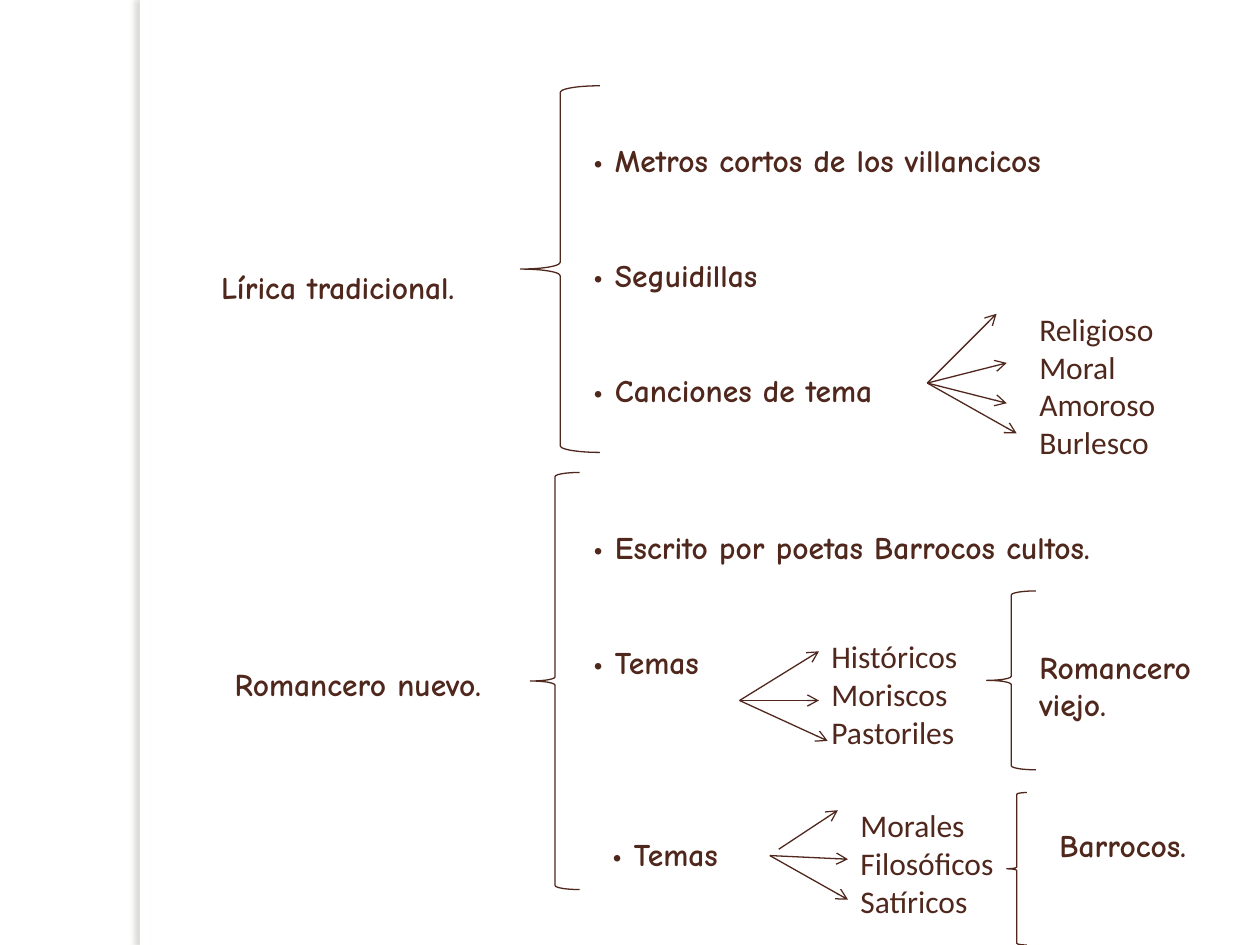
from dataclasses import dataclass

from lxml.etree import SubElement
from pptx import Presentation
from pptx.dml.color import RGBColor
from pptx.enum.shapes import MSO_CONNECTOR as Connector, MSO_SHAPE as Preset
from pptx.enum.text import MSO_ANCHOR as Anchor, MSO_AUTO_SIZE as AutoSize, PP_ALIGN as Align
from pptx.oxml.ns import qn
from pptx.util import Pt

BROWN, WHITE, SHADOW = "4F271C", "FFFFFF", "736F63"
HAND, PLAIN = "Comic Neue", "Calibri"
BLANK_LINES = 44  # gap between separated points


@dataclass
class Box:
    left: float
    top: float
    width: float
    height: float

    def lengths(self) -> list:
        return [Pt(v) for v in (self.left, self.top, self.width, self.height)]


@dataclass
class Note:
    box: Box
    lines: list[str]
    font: str = HAND
    gap: float = 0
    wrap: bool = True


@dataclass
class Fan:
    start: tuple[float, float]
    ends: list[tuple[float, float]]


LABELS = [
    ("Lírica tradicional.", Box(99.4, 128.2, 187.2, 72)),
    ("Romancero nuevo.", Box(110.9, 355, 187.2, 72)),
]
BRACES = [
    Box(297.4, 49, 45.4, 209.5),
    Box(303.1, 270, 28.1, 238.3),
    Box(563.8, 337.7, 28.1, 102.2),
    Box(575.3, 452.9, 11.5, 87.1),
]
NOTES = [
    Note(Box(331.9, 77, 447.8, 159.8),
         ["• Metros cortos de los villancicos", "• Seguidillas", "• Canciones de tema"],
         gap=BLANK_LINES),
    Note(Box(586.8, 173.5, 85, 94.3), ["Religioso", "Moral", "Amoroso", "Burlesco"], PLAIN),
    Note(Box(331.9, 298.1, 339.8, 116.6),
         ["• Escrito por poetas Barrocos cultos.", "• Temas"], gap=BLANK_LINES),
    Note(Box(468, 360.7, 193, 72.7), ["Históricos", "Moriscos", "Pastoriles"], PLAIN),
    Note(Box(586.8, 366.5, 118.8, 51.1), ["Romancero viejo."]),
    Note(Box(342.7, 473.8, 97.2, 28.8), ["• Temas"], wrap=False),
    Note(Box(484.6, 457.2, 90.7, 72.7), ["Morales", "Filosóficos", "Satíricos"], PLAIN),
    Note(Box(598.3, 468.7, 108, 28.8), ["Barrocos."]),
]
FANS = [
    Fan((529.9, 218.9), [(569.5, 179.3), (575.3, 207.4), (575.3, 230.4), (581, 247.7)]),
    Fan((422.6, 400.3), [(468, 372.2), (468, 400.3), (473, 423.4)]),
    Fan((439.9, 488.9), [(484.6, 491), (484.6, 514.1)]),
    Fan((445, 485.3), [(478.8, 463)]),
]


def color(value: str) -> RGBColor:
    return RGBColor.from_string(value)


def style_paragraph(paragraph, text: str, name: str) -> None:
    paragraph.text = text
    font = paragraph.font
    font.name, font.size, font.bold = name, Pt(18), name == HAND
    font.color.rgb = color(BROWN)


def add_preset(slide, preset, box: Box, fill: str | None, line: str | None, weight: float = 0.75):
    shape = slide.shapes.add_shape(preset, *box.lengths())
    shape.shadow.inherit = False
    if fill:
        shape.fill.solid()
        shape.fill.fore_color.rgb = color(fill)
    else:
        shape.fill.background()
    if line:
        shape.line.color.rgb = color(line)
        shape.line.width = Pt(weight)
    else:
        shape.line.fill.background()
    return shape


def add_margin_strip(slide) -> None:
    strip = add_preset(slide, Preset.RECTANGLE, Box(80, 0, 5.8, 540), WHITE, None)
    effects = strip._element.spPr.find(qn("a:effectLst"))
    shadow = SubElement(effects, qn("a:outerShdw"), blurRad=str(Pt(3)), dist=str(Pt(3)),
                        dir="10800000", algn="tl", rotWithShape="0")
    tint = SubElement(shadow, qn("a:srgbClr"), val=SHADOW)
    SubElement(tint, qn("a:alpha"), val="25000")


def add_label(slide, text: str, box: Box) -> None:
    label = add_preset(slide, Preset.RECTANGLE, box, WHITE, WHITE, 2)
    label.text_frame.vertical_anchor = Anchor.MIDDLE
    paragraph = label.text_frame.paragraphs[0]
    paragraph.alignment = Align.CENTER
    style_paragraph(paragraph, text, HAND)


def add_note(slide, note: Note) -> None:
    frame = slide.shapes.add_textbox(*note.box.lengths()).text_frame
    frame.word_wrap = note.wrap
    frame.auto_size = AutoSize.SHAPE_TO_FIT_TEXT
    for index, text in enumerate(note.lines):
        paragraph = frame.add_paragraph() if index else frame.paragraphs[0]
        style_paragraph(paragraph, text, note.font)
        if index and note.gap:
            paragraph.space_before = Pt(note.gap)


def add_fan(slide, fan: Fan) -> None:
    for end in fan.ends:
        points = [Pt(v) for v in (*fan.start, *end)]
        arrow = slide.shapes.add_connector(Connector.STRAIGHT, *points)
        arrow.line.color.rgb = color(BROWN)
        arrow.line.width = Pt(0.75)
        SubElement(arrow.line._get_or_add_ln(), qn("a:tailEnd"), type="arrow")
        SubElement(arrow._element.spPr, qn("a:effectLst"))


def main() -> None:
    presentation = Presentation()
    presentation.slide_width, presentation.slide_height = Pt(720), Pt(540)
    slide = presentation.slides.add_slide(presentation.slide_layouts[6])
    slide.background.fill.solid()
    slide.background.fill.fore_color.rgb = color(WHITE)

    # Left margin and the two main topics
    add_margin_strip(slide)
    for text, box in LABELS:
        add_label(slide, text, box)

    # Braces, branch texts and arrows
    for box in BRACES:
        add_preset(slide, Preset.LEFT_BRACE, box, None, BROWN)
    for note in NOTES:
        add_note(slide, note)
    for fan in FANS:
        add_fan(slide, fan)

    presentation.save("out.pptx")


if __name__ == "__main__":
    main()
